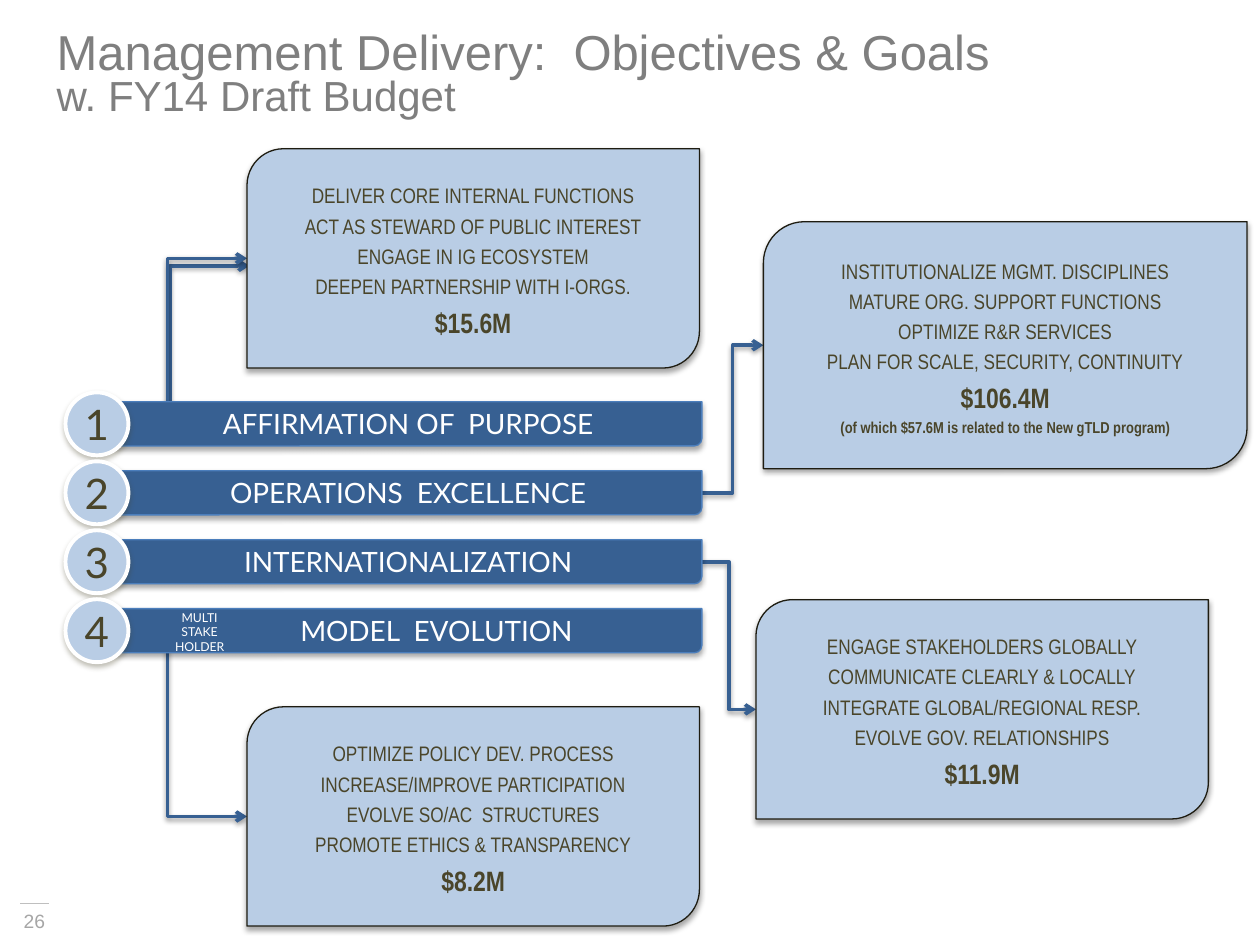
"""Build the objectives and goals slide with four budget cards."""
from pptx import Presentation, util as u
from pptx.dml.color import RGBColor
from pptx.enum import shapes, text
from pptx.oxml import parse_xml
from pptx.oxml.ns import nsdecls, qn

COLOURS = {"grey": "7F7F7F", "pale": "A6A6A6", "rule": "BFBFBF", "sky": "B9CDE5",
           "navy": "376092", "edge": "4B7EBC", "olive": "4A452A", "ink": "1E1C11",
           "white": "FFFFFF", "black": "000000"}

TITLE = [("Management Delivery:  Objectives & Goals", 28), ("w. FY14 Draft Budget", 24)]
PAGE_NUMBER = "26"
GOALS = ["AFFIRMATION OF  PURPOSE", "OPERATIONS  EXCELLENCE",
         "INTERNATIONALIZATION", "MODEL  EVOLUTION"]
PREFIX = ["MULTI", "STAKE", "HOLDER"]
CARDS = [
    {"place": (4.98, 3, 9.12, 4.42), "budget": "$15.6M", "note": None,
     "aims": ["DELIVER CORE INTERNAL FUNCTIONS", "ACT AS STEWARD OF PUBLIC INTEREST",
              "ENGAGE IN IG ECOSYSTEM", "DEEPEN PARTNERSHIP WITH I-ORGS."]},
    {"place": (15.39, 4.47, 9.75, 4.98), "budget": "$106.4M",
     "note": "(of which $57.6M is related to the New gTLD program)",
     "aims": ["INSTITUTIONALIZE MGMT. DISCIPLINES", "MATURE ORG. SUPPORT FUNCTIONS",
              "OPTIMIZE R&R SERVICES", "PLAN FOR SCALE, SECURITY, CONTINUITY"]},
    {"place": (15.24, 12.09, 9.12, 4.42), "budget": "$11.9M", "note": None,
     "aims": ["ENGAGE STAKEHOLDERS GLOBALLY", "COMMUNICATE CLEARLY & LOCALLY",
              "INTEGRATE GLOBAL/REGIONAL RESP.", "EVOLVE GOV. RELATIONSHIPS"]},
    {"place": (4.98, 14.25, 9.12, 4.42), "budget": "$8.2M", "note": None,
     "aims": ["OPTIMIZE POLICY DEV. PROCESS", "INCREASE/IMPROVE PARTICIPATION",
              "EVOLVE SO/AC  STRUCTURES", "PROMOTE ETHICS & TRANSPARENCY"]},
]

BAR_LEFT, BAR_TOP, BAR_WIDTH, BAR_HEIGHT, BAR_STEP = 2.31, 8.1, 11.84, 0.89, 1.39
BADGE_LEFT, BADGE_SIZE = 1.32, 1.27
PREFIX_INDENT = 1.14
STEM_X = 3.38

NARROW = {"name": "Arial Narrow", "size": 12, "colour": "olive"}
ARIAL = {"name": "Arial", "size": 28, "colour": "grey"}
LATO = {"name": "Lato", "size": 16, "colour": "white"}
FRAME = {"word_wrap": True, "vertical_anchor": text.MSO_ANCHOR.MIDDLE}
NO_MARGINS = dict.fromkeys(("margin_left", "margin_top", "margin_right", "margin_bottom"), 0)
CENTRED = {"alignment": text.PP_ALIGN.CENTER}
LOOSE = {**CENTRED, "line_spacing": 1.2}


def rgb(name):
    return RGBColor.from_string(COLOURS[name])


def apply(target, values):
    for key, value in values.items():
        setattr(target, key, value)


def write(box, lines, paragraph_format, frame_format):
    frame = box.text_frame
    apply(frame, frame_format)
    for index, (words, style) in enumerate(lines):
        para = frame.add_paragraph() if index else frame.paragraphs[0]
        apply(para, paragraph_format)
        span = para.add_run()
        span.text = words
        apply(span.font, {"name": style["name"], "size": u.Pt(style["size"]),
                          "bold": style.get("bold", False)})
        span.font.color.rgb = rgb(style["colour"])


def add_shadow(shape, colour, alpha, distance):
    properties = shape._element.spPr
    effects = properties.find(qn("a:effectLst"))
    if effects is None:
        effects = parse_xml(f"<a:effectLst {nsdecls('a')}/>")
        properties.append(effects)
    effects.append(parse_xml(
        f'<a:outerShdw {nsdecls("a")} blurRad="{u.Pt(3.1)}" dist="{u.Pt(distance)}" '
        f'dir="5400000" rotWithShape="0"><a:srgbClr val="{COLOURS[colour]}">'
        f'<a:alpha val="{alpha * 1000}"/></a:srgbClr></a:outerShdw>'))


def add_block(page, kind, place, fill, line, weight, shadow):
    shape = page.shapes.add_shape(kind, *map(u.Cm, place))
    shape.fill.solid()
    shape.fill.fore_color.rgb = rgb(fill)
    shape.line.color.rgb = rgb(line)
    shape.line.width = u.Pt(weight)
    shape.shadow.inherit = False
    add_shadow(shape, shadow, 35, 1.8)
    return shape


def add_arrow(page, start, end):
    arrow = page.shapes.add_connector(shapes.MSO_CONNECTOR.ELBOW, *map(u.Cm, (*start, *end)))
    arrow.line.color.rgb = rgb("navy")
    arrow.line.width = u.Pt(2)
    arrow.line._get_or_add_ln().append(parse_xml(f'<a:tailEnd {nsdecls("a")} type="arrow"/>'))
    add_shadow(arrow, "black", 38, 1.6)
    return arrow


def add_corner_arrow(page, start, end):
    (x1, y1), (x2, y2) = start, end
    rising = y2 < y1
    middle_x, middle_y = (x1 + x2) / 2, (y1 + y2) / 2
    half_length, half_width = abs(y2 - y1) / 2, (x2 - x1) / 2 * (1 if rising else -1)
    arrow = add_arrow(page, (middle_x + half_length, middle_y + half_width),
                      (middle_x - half_length, middle_y - half_width))
    properties = arrow._element.spPr
    properties.find(qn("a:prstGeom")).set("prst", "bentConnector2")
    properties.find(qn("a:xfrm")).set("rot", "5400000" if rising else "16200000")


def card_entry(card):
    left, top, _, height = card["place"]
    return left, top + height / 2


def add_card(page, card):
    box = add_block(page, shapes.MSO_SHAPE.ROUND_2_DIAG_RECTANGLE, card["place"],
                    "sky", "ink", 0.75, "black")
    lines = [(aim, NARROW) for aim in card["aims"]]
    lines.append((card["budget"], {**NARROW, "size": 16, "bold": True}))
    if card["note"]:
        lines.append((card["note"], {**NARROW, "size": 9, "bold": True}))
    write(box, lines, LOOSE, FRAME)


def add_goal(page, index, goal):
    top = BAR_TOP + index * BAR_STEP
    bar = add_block(page, shapes.MSO_SHAPE.ROUND_2_DIAG_RECTANGLE,
                    (BAR_LEFT, top, BAR_WIDTH, BAR_HEIGHT), "navy", "edge", 0.75, "black")
    indent = PREFIX_INDENT if index == len(GOALS) - 1 else 0
    write(bar, [(goal, LATO)], CENTRED, {**FRAME, "margin_left": u.Cm(0.25 + indent)})
    badge_top = top + (BAR_HEIGHT - BADGE_SIZE) / 2
    badge = add_block(page, shapes.MSO_SHAPE.OVAL,
                      (BADGE_LEFT, badge_top, BADGE_SIZE, BADGE_SIZE),
                      "sky", "white", 2.25, "olive")
    write(badge, [(str(index + 1), {**LATO, "size": 24, "colour": "olive"})],
          CENTRED, {**FRAME, **NO_MARGINS})


def add_arrows(page):
    purpose, operations, international, evolution = map(card_entry, CARDS)
    last_top = BAR_TOP + 3 * BAR_STEP
    for shift_x, shift_y in ((0.05, 0.15), (0, 0)):
        add_corner_arrow(page, (STEM_X + shift_x, BAR_TOP + 0.1 + shift_y),
                         (purpose[0] + shift_x, purpose[1] + shift_y))
    add_corner_arrow(page, (STEM_X, last_top), evolution)
    for index, entry in ((1, operations), (2, international)):
        middle = BAR_TOP + index * BAR_STEP + BAR_HEIGHT / 2
        add_arrow(page, (BAR_LEFT + BAR_WIDTH, middle), entry)


def add_heading(page):
    title = page.shapes.title
    apply(title, dict(zip(("left", "top", "width", "height"),
                          map(u.Cm, (0.89, 0.53, 21.36, 1.47)))))
    write(title, [(words, {**ARIAL, "size": size}) for words, size in TITLE],
          {"alignment": text.PP_ALIGN.LEFT, "line_spacing": 0.8, "space_before": u.Pt(0)},
          {"word_wrap": True, "vertical_anchor": text.MSO_ANCHOR.TOP,
           "auto_size": text.MSO_AUTO_SIZE.NONE})


def add_footer(page):
    rule = page.shapes.add_connector(shapes.MSO_CONNECTOR.STRAIGHT,
                                     *map(u.Cm, (0.41, 18.21, 0.99, 18.21)))
    rule.line.color.rgb = rgb("rule")
    rule.line.width = u.Pt(0.75)
    rule._element.spPr.append(parse_xml(f"<a:effectLst {nsdecls('a')}/>"))
    number = page.shapes.add_textbox(*map(u.Cm, (0.1, 18.21, 1.19, 0.74)))
    write(number, [(PAGE_NUMBER, {**ARIAL, "size": 11, "colour": "pale"})],
          CENTRED, {"word_wrap": True})


def main():
    deck = Presentation()
    deck.slide_width, deck.slide_height = u.Cm(25.4), u.Cm(19.05)
    page = deck.slides.add_slide(deck.slide_layouts[5])
    add_footer(page)
    add_heading(page)
    add_arrows(page)
    for card in CARDS:
        add_card(page, card)
    for index, goal in enumerate(GOALS):
        add_goal(page, index, goal)
    prefix = page.shapes.add_textbox(*map(u.Cm, (3.02, 12.17, 2.01, 1.14)))
    write(prefix, [(word, {**LATO, "size": 7}) for word in PREFIX],
          CENTRED, {"word_wrap": False})
    deck.save("out.pptx")


if __name__ == "__main__":
    main()
